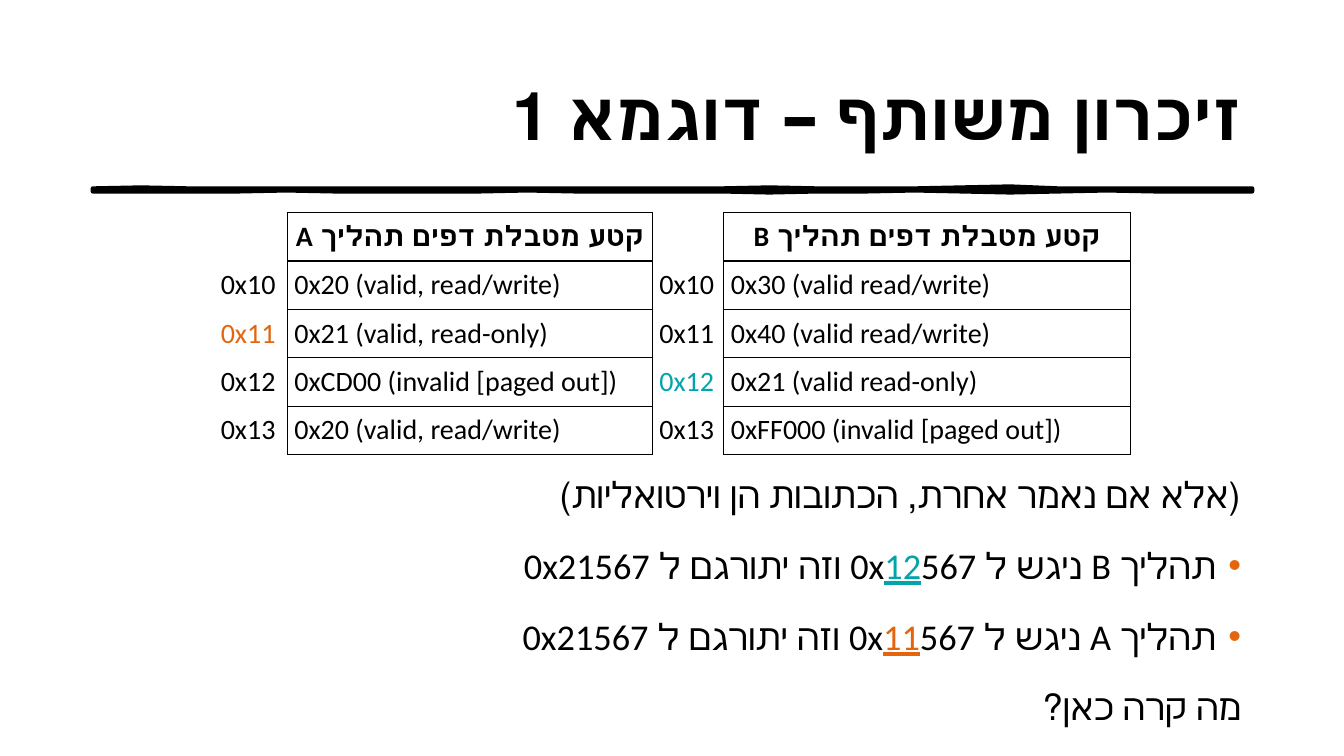
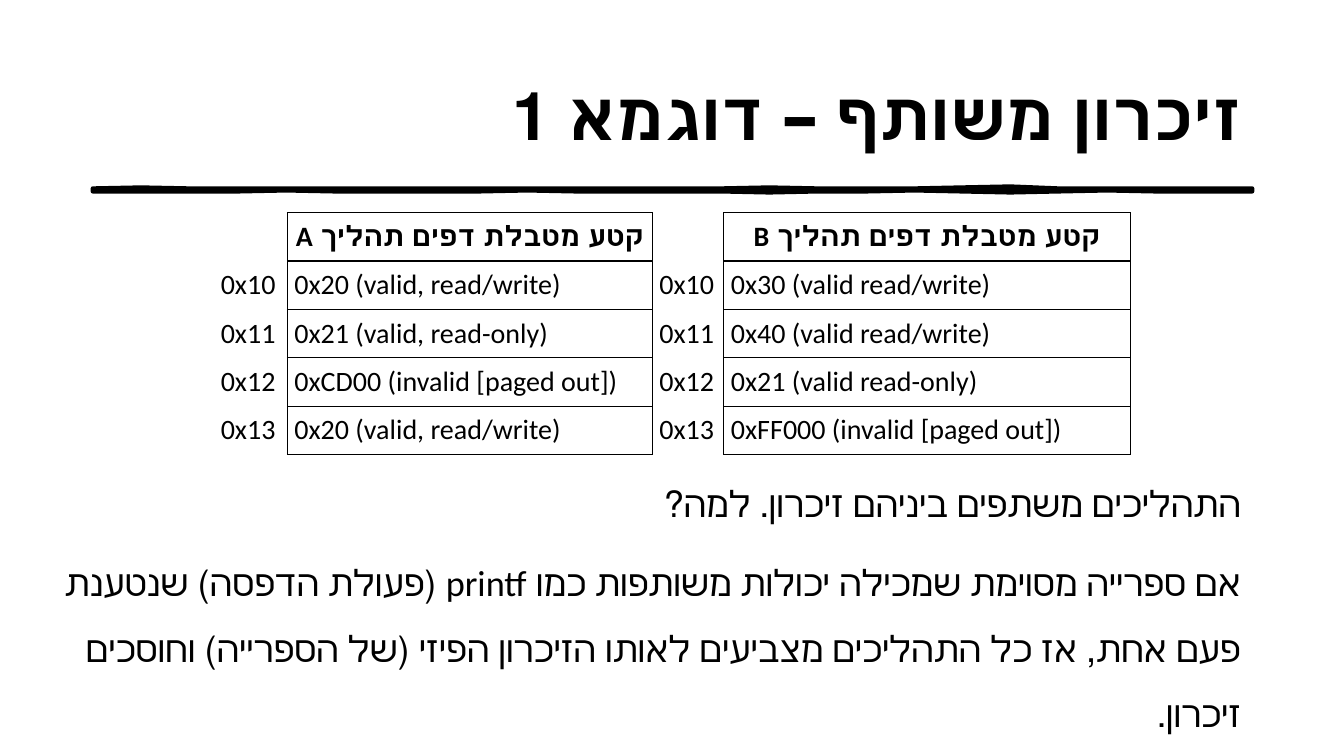
from dataclasses import dataclass

from lxml import etree
from pptx import Presentation, util as u
from pptx.dml.color import RGBColor
from pptx.enum import text
from pptx.oxml.ns import qn


@dataclass(frozen=True)
class Theme:
    font: str = "Calibri"
    ink: str = "000000"
    orange: str = "E4650E"
    teal: str = "00A5AB"
    title_size: float = 48
    body_size: float = 25.9
    table_size: float = 20
    border: float = 1
    rule: float = 3


THEME = Theme()
SLIDE = (13.33, 7.5)
TITLE_BOX = (0.92, 0.4, 11.5, 1.45)
BODY_BOX = (0.26, 4.51, 12.15, 2.76)
TABLE_AT = (2.12, 2.11)
COLUMNS = (0.73, 3.62, 0.71, 4.03)
ROW_HEIGHT = 0.48
CELL_INSET = 0.07
BULLET_INDENT = 0.25

# Brush rule, in hundredths of an inch: evenly spaced heights of each edge
RULE_LEFT, RULE_WIDTH = 92, 1150
RULE_TOP = (187, 186, 187, 187, 187, 187, 187, 187, 187, 187, 187, 187, 187,
            187, 186, 187, 187, 187, 186, 185, 187, 187, 187, 187, 187)
RULE_BOTTOM = (190, 190, 190, 190, 189, 190, 190, 190, 190, 189, 190, 190, 190,
               190, 191, 190, 190, 189, 190, 191, 190, 189, 190, 190, 190)

TITLE = "זיכרון משותף – דוגמא 1"
PAGE_TABLE = [
    ("", "קטע מטבלת דפים תהליך A", "", "קטע מטבלת דפים תהליך B"),
    ("0x10", "0x20 (valid, read/write)", "0x10", "0x30 (valid read/write)"),
    ("0x11", "0x21 (valid, read-only)", "0x11", "0x40 (valid read/write)"),
    ("0x12", "0xCD00 (invalid [paged out])", "0x12", "0x21 (valid read-only)"),
    ("0x13", "0x20 (valid, read/write)", "0x13", "0xFF000 (invalid [paged out])"),
]


def access(process, page_number, colour):
    """A sentence on one memory access, as (words, highlight) spans."""
    return [(f"תהליך {process} ניגש ל 0x", None), (page_number, colour),
            ("567 וזה יתורגם ל 0x21567", None)]


# Each body line is (is bulleted, spans); highlights are keyed by (row, column)
SLIDES = [
    {
        "highlights": {(2, 0): THEME.orange, (3, 2): THEME.teal},
        "line_spacing": 1.3,
        "body": [
            (False, [("(אלא אם נאמר אחרת, הכתובות הן וירטואליות)", None)]),
            (True, access("B", "12", THEME.teal)),
            (True, access("A", "11", THEME.orange)),
            (False, [("מה קרה כאן?", None)]),
        ],
    },
    {
        "highlights": {},
        "line_spacing": 1.5,
        "body": [
            (False, [("התהליכים משתפים ביניהם זיכרון. למה?", None)]),
            (False, [("אם ספרייה מסוימת שמכילה יכולות משותפות כמו printf "
                      "(פעולת הדפסה) שנטענת פעם אחת, אז כל התהליכים מצביעים "
                      "לאותו הזיכרון הפיזי (של הספרייה) וחוסכים זיכרון.", None)]),
        ],
    },
]


def place(shape, box):
    shape.left, shape.top, shape.width, shape.height = map(u.Inches, box)


def style(span, size, colour=THEME.ink, bold=False):
    font = span.font
    font.name, font.size, font.bold = THEME.font, u.Pt(size), bold
    font.color.rgb = RGBColor.from_string(colour)


def right_to_left(para, alignment):
    para.alignment = alignment
    para._p.get_or_add_pPr().set("rtl", "1")


def set_bullet(para, bulleted):
    properties = para._p.get_or_add_pPr()
    indent = u.Inches(BULLET_INDENT) if bulleted else 0
    properties.set("marL", str(indent))
    properties.set("indent", str(-indent))
    if bulleted:
        colour = etree.SubElement(properties, qn("a:buClr"))
        etree.SubElement(colour, qn("a:srgbClr"), val=THEME.orange)
        etree.SubElement(properties, qn("a:buFont"), typeface="Arial")
        etree.SubElement(properties, qn("a:buChar"), char="•")
    else:
        etree.SubElement(properties, qn("a:buNone"))


def set_borders(cell, sides):
    """Draw the named sides (of L, R, T, B) and clear the others."""
    properties = cell._tc.get_or_add_tcPr()
    for position, side in enumerate("LRTB"):
        line = etree.Element(qn(f"a:ln{side}"), w=str(u.Pt(THEME.border)))
        if side in sides:
            fill = etree.SubElement(line, qn("a:solidFill"))
            etree.SubElement(fill, qn("a:srgbClr"), val=THEME.ink)
        else:
            etree.SubElement(line, qn("a:noFill"))
        properties.insert(position, line)


def add_rule(page):
    """Draw the brush rule under the title."""
    step = RULE_WIDTH / (len(RULE_TOP) - 1)
    edge = [(RULE_LEFT + i * step, y) for i, y in enumerate(RULE_TOP)]
    edge += [(RULE_LEFT + i * step, y) for i, y in enumerate(RULE_BOTTOM)][::-1]
    builder = page.shapes.build_freeform(*edge[0], scale=u.Inches(0.01))
    builder.add_line_segments(edge[1:], close=True)
    rule = builder.convert_to_shape()
    rule.shadow.inherit = False
    rule.fill.solid()
    rule.fill.fore_color.rgb = RGBColor.from_string(THEME.ink)
    rule.line.color.rgb = RGBColor.from_string(THEME.ink)
    rule.line.width = u.Pt(THEME.rule)


def fill_title(title):
    frame = title.text_frame
    frame.text = TITLE
    frame.auto_size = text.MSO_AUTO_SIZE.NONE
    frame.vertical_anchor = text.MSO_ANCHOR.MIDDLE
    right_to_left(frame.paragraphs[0], text.PP_ALIGN.RIGHT)
    style(frame.paragraphs[0].runs[0], THEME.title_size, bold=True)


def fill_body(body, lines, line_spacing):
    frame = body.text_frame
    frame.auto_size = text.MSO_AUTO_SIZE.NONE
    for number, (bulleted, spans) in enumerate(lines):
        para = frame.add_paragraph() if number else frame.paragraphs[0]
        right_to_left(para, text.PP_ALIGN.RIGHT)
        para.line_spacing, para.space_before = line_spacing, u.Pt(10)
        set_bullet(para, bulleted)
        for words, highlight in spans:
            span = para.add_run()
            span.text = words
            style(span, THEME.body_size, highlight or THEME.ink)
            if highlight:
                span.font.underline = True


def add_page_table(page, highlights):
    box = (*TABLE_AT, sum(COLUMNS), ROW_HEIGHT * len(PAGE_TABLE))
    table = page.shapes.add_table(len(PAGE_TABLE), len(COLUMNS),
                                  *map(u.Inches, box)).table
    table.first_row = table.horz_banding = False
    for column, width in zip(table.columns, COLUMNS):
        column.width = u.Inches(width)
    for r, row in enumerate(PAGE_TABLE):
        for c, words in enumerate(row):
            cell = table.cell(r, c)
            cell.fill.background()
            cell.margin_left = cell.margin_right = u.Inches(CELL_INSET)
            cell.margin_top = cell.margin_bottom = u.Inches(CELL_INSET)
            set_borders(cell, ("R", "LRTB", "LR", "LRTB")[c])
            if not words:
                continue
            cell.text_frame.text = words
            para = cell.text_frame.paragraphs[0]
            if r == 0:
                right_to_left(para, text.PP_ALIGN.CENTER)
            style(para.runs[0], THEME.table_size,
                  highlights.get((r, c), THEME.ink), bold=r == 0)


def main():
    deck = Presentation()
    deck.slide_width, deck.slide_height = map(u.Inches, SLIDE)
    layout = deck.slide_layouts[1]
    for holder, box in zip(layout.placeholders, (TITLE_BOX, BODY_BOX)):
        place(holder, box)
    for content in SLIDES:
        page = deck.slides.add_slide(layout)
        add_rule(page)
        fill_title(page.shapes.title)
        fill_body(page.placeholders[1], content["body"], content["line_spacing"])
        add_page_table(page, content["highlights"])
    deck.save("out.pptx")


if __name__ == "__main__":
    main()
